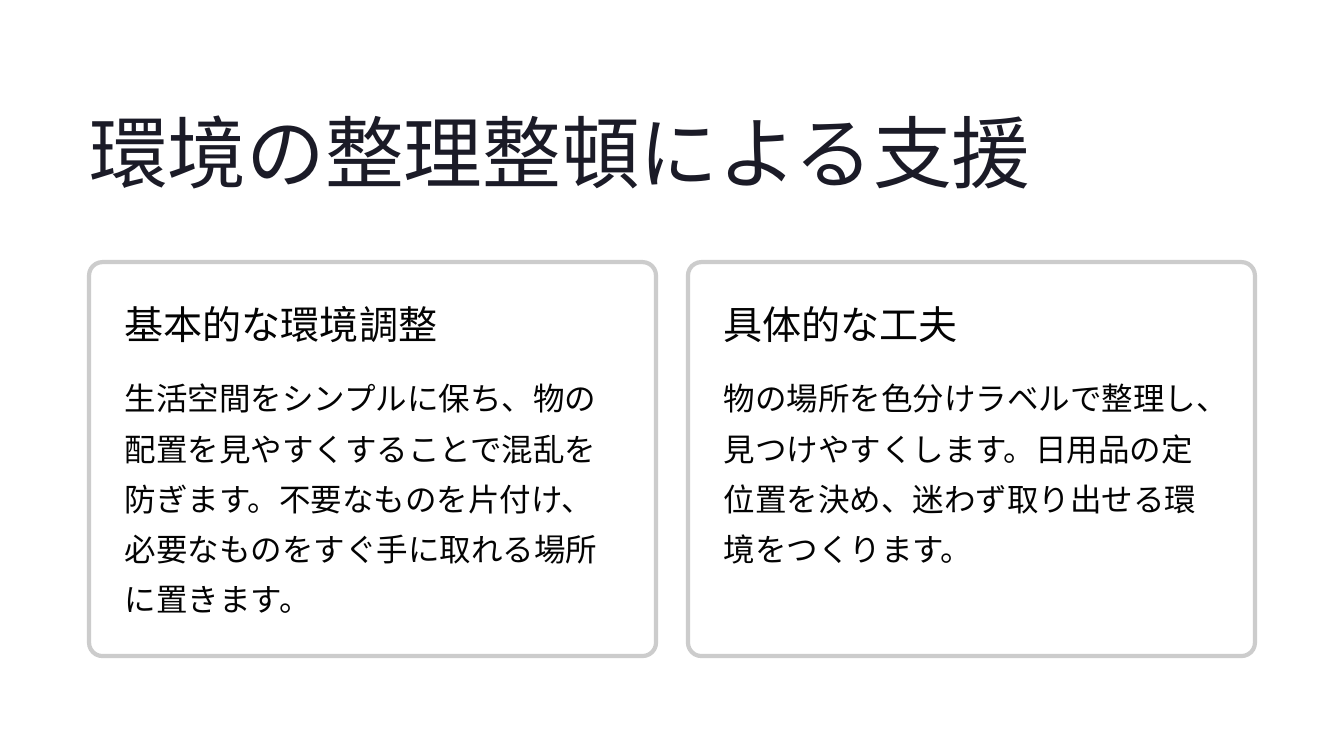
from pptx import Presentation
from pptx.dml.color import RGBColor
from pptx.enum.shapes import MSO_SHAPE
from pptx.enum.text import MSO_ANCHOR, MSO_AUTO_SIZE, PP_ALIGN
from pptx.oxml.ns import qn
from pptx.util import Inches, Pt
from lxml.etree import SubElement

HEADING_FONT, BODY_FONT = "Inter", "Karla"
TITLE_COLOR, TEXT_COLOR = "1B1B27", "030303"
CARD_FILL, CARD_BORDER = "FFFFFF", "CCCCCC"

LEFT, CARD_TOP = 1.06, 3.12
CARD_WIDTH, CARD_HEIGHT, CARD_GAP = 6.75, 4.69, 0.38
PADDING = 0.425

CARDS = [
    ("基本的な環境調整",
     "生活空間をシンプルに保ち、物の配置を見やすくすることで混乱を防ぎます。"
     "不要なものを片付け、必要なものをすぐ手に取れる場所に置きます。"),
    ("具体的な工夫",
     "物の場所を色分けラベルで整理し、見つけやすくします。"
     "日用品の定位置を決め、迷わず取り出せる環境をつくります。"),
]


def rgb(color):
    return RGBColor.from_string(color)


def write(frame, text, font, size, leading, color, wrap):
    frame.margin_left = frame.margin_top = 0
    frame.margin_right = frame.margin_bottom = 0
    frame.word_wrap = wrap
    frame.auto_size = MSO_AUTO_SIZE.NONE
    frame.vertical_anchor = MSO_ANCHOR.TOP
    paragraph = frame.paragraphs[0]
    paragraph.alignment = PP_ALIGN.LEFT
    paragraph.line_spacing = Pt(leading)
    paragraph.space_before = Pt(0)
    run = paragraph.add_run()
    run.text = text
    run.font.name = font
    run.font.size = Pt(size)
    run.font.color.rgb = rgb(color)


def add_title(slide, text):
    title = slide.shapes.title
    title.left, title.top = Inches(LEFT), Inches(1.19)
    title.width, title.height = Inches(11.29), Inches(1.18)
    write(title.text_frame, text, HEADING_FONT, 67.5, 84.5, TITLE_COLOR, False)


def add_panel(slide, left):
    panel = slide.shapes.add_shape(
        MSO_SHAPE.ROUNDED_RECTANGLE, Inches(left), Inches(CARD_TOP),
        Inches(CARD_WIDTH), Inches(CARD_HEIGHT))
    panel.adjustments[0] = 0.034
    panel.shadow.inherit = False
    panel.fill.solid()
    panel.fill.fore_color.rgb = rgb(CARD_FILL)
    fill_color = panel.fill._xPr.find(qn("a:solidFill"))[0]
    SubElement(fill_color, qn("a:alpha"), val="95000")
    panel.line.color.rgb = rgb(CARD_BORDER)
    panel.line.width = Pt(3.6)


def add_text(slide, left, top, width, height, *style):
    box = slide.shapes.add_textbox(
        Inches(left), Inches(top), Inches(width), Inches(height))
    write(box.text_frame, *style)


def add_card(slide, left, heading, body):
    add_panel(slide, left)
    text_left = left + PADDING
    text_width = CARD_WIDTH - 2 * PADDING
    add_text(slide, text_left, 3.55, 4.72, 0.59,
             heading, HEADING_FONT, 33.5, 42, TEXT_COLOR, False)
    add_text(slide, text_left, 4.37, text_width, 3.02,
             body, BODY_FONT, 27, 43, TEXT_COLOR, True)


def main():
    deck = Presentation()
    deck.slide_width, deck.slide_height = Inches(16), Inches(9)
    slide = deck.slides.add_slide(deck.slide_layouts[5])
    add_title(slide, "環境の整理整頓による支援")
    for column, (heading, body) in enumerate(CARDS):
        add_card(slide, LEFT + column * (CARD_WIDTH + CARD_GAP), heading, body)
    deck.save("out.pptx")


if __name__ == "__main__":
    main()
